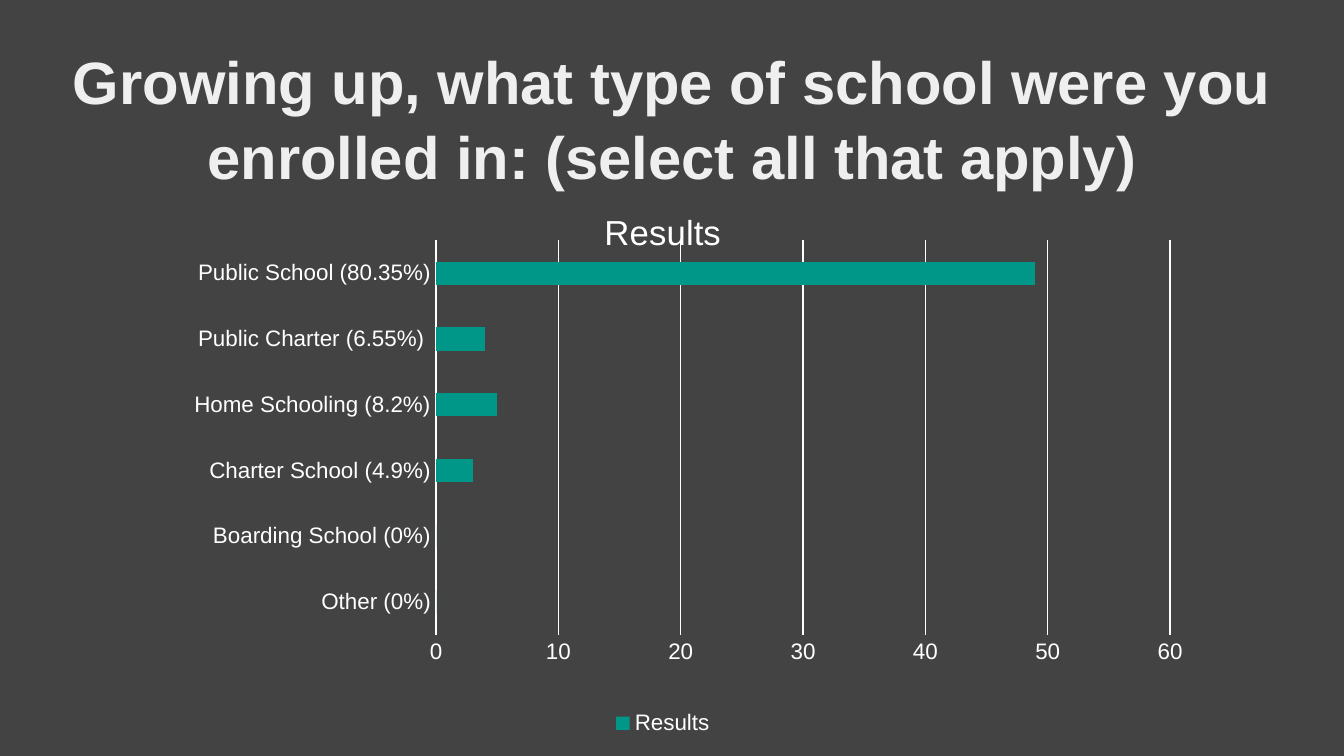
"""Build a survey slide with a title and a bar chart of school types."""
from dataclasses import dataclass

from lxml import etree
from pptx import Presentation, util as u
from pptx.chart.data import CategoryChartData
from pptx.dml.color import RGBColor
from pptx.enum import chart as ch, text

PX = 9525
FACE = "Arial"
WHITE = "FFFFFF"
TEAL = "009688"


@dataclass
class Box:
    left: int
    top: int
    width: int
    height: int

    def emu(self) -> list[int]:
        return [n * PX for n in (self.left, self.top, self.width, self.height)]


@dataclass
class Answer:
    label: str
    count: int


ANSWERS = [
    Answer("Other (0%)", 0),
    Answer("Boarding School (0%)", 0),
    Answer("Charter School (4.9%)", 3),
    Answer("Home Schooling (8.2%)", 5),
    Answer("Public Charter (6.55%) ", 4),
    Answer("Public School (80.35%)", 49),
]


def rgb(code: str) -> RGBColor:
    return RGBColor.from_string(code)


def style(font, size: float, color: str = WHITE, bold: bool = False) -> None:
    font.name, font.size, font.bold = FACE, u.Pt(size), bold
    font.color.rgb = rgb(color)


def rule(line) -> None:
    line.color.rgb = rgb(WHITE)
    line.width = u.Pt(0.75)


def add_title(slide, box: Box, words: str) -> None:
    frame = slide.shapes.add_textbox(*box.emu()).text_frame
    frame.word_wrap = True
    frame.vertical_anchor = text.MSO_ANCHOR.TOP
    for side in ("left", "top", "right", "bottom"):
        setattr(frame, f"margin_{side}", u.Inches(0.1))
    para = frame.paragraphs[0]
    para.text = words
    para.alignment = text.PP_ALIGN.CENTER
    para.line_spacing = 1.05
    style(para.font, 32, "EFEFEF", True)


def place_plot(chart, x: float, y: float, w: float, h: float) -> None:
    area = chart.plots[0]._element.getparent()
    space = etree.QName(area).namespace
    for old in area.findall(f"{{{space}}}layout"):
        area.remove(old)
    layout = etree.Element(f"{{{space}}}layout")
    manual = etree.SubElement(layout, f"{{{space}}}manualLayout")
    parts = {"layoutTarget": "inner", "xMode": "edge", "yMode": "edge",
             "x": x, "y": y, "w": w, "h": h}
    for tag, val in parts.items():
        etree.SubElement(manual, f"{{{space}}}{tag}").set("val", str(val))
    area.insert(0, layout)


def add_bars(slide, box: Box, name: str, rows: list[Answer]) -> None:
    data = CategoryChartData()
    data.categories = [row.label for row in rows]
    data.add_series(name, [row.count for row in rows])
    kind = ch.XL_CHART_TYPE.BAR_CLUSTERED
    chart = slide.shapes.add_chart(kind, *box.emu(), data).chart
    style(chart.font, 10)

    title = chart.chart_title
    title.text_frame.text = name
    style(title.text_frame.paragraphs[0].font, 18.6)

    chart.has_legend = True
    chart.legend.position = ch.XL_LEGEND_POSITION.BOTTOM
    chart.legend.include_in_layout = False
    style(chart.legend.font, 12)

    plot = chart.plots[0]
    plot.gap_width = 182
    plot.vary_by_categories = False
    fill = plot.series[0].format.fill
    fill.solid()
    fill.fore_color.rgb = rgb(TEAL)

    cats, vals = chart.category_axis, chart.value_axis
    for axis in (cats, vals):
        axis.major_tick_mark = axis.minor_tick_mark = ch.XL_TICK_MARK.NONE
        style(axis.tick_labels.font, 12)
    cats.has_major_gridlines = False
    rule(cats.format.line)
    vals.minimum_scale, vals.maximum_scale, vals.major_unit = 0, 60, 10
    vals.format.line.fill.background()
    rule(vals.major_gridlines.format.line)
    place_plot(chart, 0.29, 0.1, 0.68, 0.71)


def main() -> None:
    deck = Presentation()
    deck.slide_width, deck.slide_height = 960 * PX, 540 * PX
    slide = deck.slides.add_slide(deck.slide_layouts[6])
    back = slide.background.fill
    back.solid()
    back.fore_color.rgb = rgb("434343")
    add_title(slide, Box(33, 20, 895, 134),
              "Growing up, what type of school were you enrolled in: "
              "(select all that apply)")
    add_bars(slide, Box(88, 132, 771, 397), "Results", ANSWERS)
    deck.save("out.pptx")


if __name__ == "__main__":
    main()
